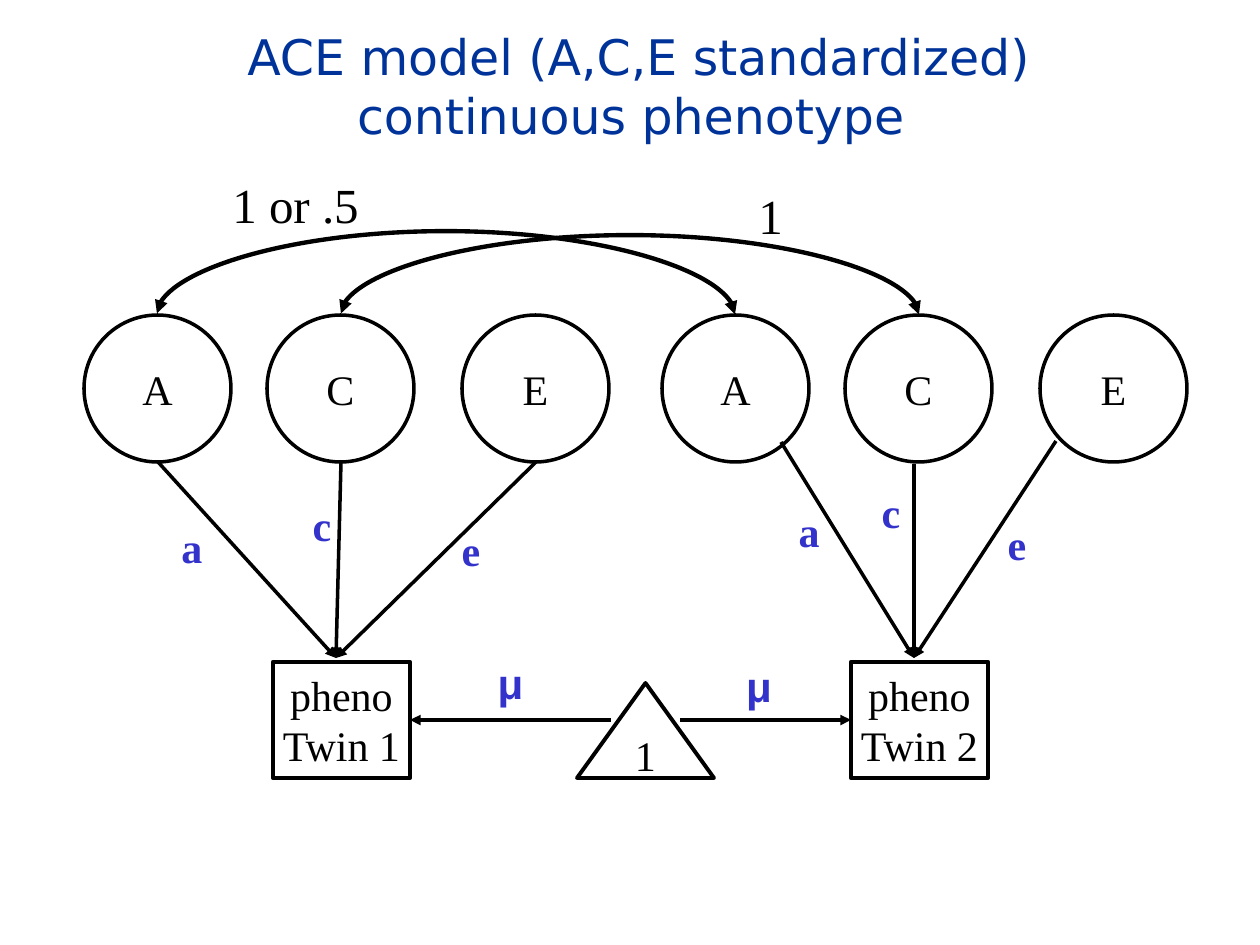
import dataclasses

import pptx
import pptx.dml.color
import pptx.enum.shapes
import pptx.enum.text
import pptx.oxml
import pptx.oxml.ns
import pptx.util

SHAPE = pptx.enum.shapes.MSO_SHAPE
CONNECTOR = pptx.enum.shapes.MSO_CONNECTOR
ALIGN = pptx.enum.text.PP_ALIGN
ANCHOR = pptx.enum.text.MSO_ANCHOR


@dataclasses.dataclass(frozen=True)
class Theme:
    ink: str = "000000"
    paper: str = "FFFFFF"
    heading: str = "003399"
    path_label: str = "3333CC"
    heading_font: str = "DejaVu Sans"
    body_font: str = "Times New Roman"
    symbol_font: str = "Arial"
    large: int = 28
    normal: int = 24
    thin: float = 2
    medium: float = 2.25
    thick: float = 2.5


@dataclasses.dataclass(frozen=True)
class Box:
    x: int
    y: int
    w: int
    h: int

    def inner(self, x, y, w, h):
        return Box(self.x + x, self.y + y, w, h)


THEME = Theme()
LABEL_HEIGHT = 63
RIGHT_SIDE, LEFT_SIDE = 3, 1


def px(length):
    return pptx.util.Emu(round(length * 914400 / 126))


def rgb(value):
    return pptx.dml.color.RGBColor.from_string(value)


def write(shape, text, size=THEME.normal, font=THEME.body_font, color=THEME.ink,
          bold=False, align=ALIGN.CENTER, anchor=ANCHOR.MIDDLE, wrap=False):
    frame = shape.text_frame
    frame.text = text
    frame.word_wrap = wrap
    frame.vertical_anchor = anchor
    for para in frame.paragraphs:
        para.alignment = align
        for span in para.runs:
            span.font.size = pptx.util.Pt(size)
            span.font.name = font
            span.font.bold = bold
            span.font.color.rgb = rgb(color)


def add_text(page, box, text, **style):
    area = page.shapes.add_textbox(px(box.x), px(box.y), px(box.w), px(box.h))
    write(area, text, **style)


def add_path_label(page, box, text, font=THEME.body_font):
    add_text(page, box, text, font=font, color=THEME.path_label, bold=True, wrap=True)


def add_node(page, kind, box, text, weight):
    node = page.shapes.add_shape(kind, px(box.x), px(box.y), px(box.w), px(box.h))
    node.shadow.inherit = False
    node.fill.solid()
    node.fill.fore_color.rgb = rgb(THEME.paper)
    node.line.color.rgb = rgb(THEME.ink)
    node.line.width = pptx.util.Pt(weight)
    write(node, text)
    return node


def add_arrow(page, start, end, weight=THEME.thin, kind=CONNECTOR.STRAIGHT, ends=("tailEnd",)):
    arrow = page.shapes.add_connector(kind, *map(px, (*start, *end)))
    arrow.line.color.rgb = rgb(THEME.ink)
    arrow.line.width = pptx.util.Pt(weight)
    outline = arrow.line._get_or_add_ln()
    for end_name in ends:
        outline.append(pptx.oxml.parse_xml(
            f'<a:{end_name} {pptx.oxml.ns.nsdecls("a")} type="triangle"/>'))
    arrow.element.spPr.append(pptx.oxml.parse_xml(
        f'<a:effectLst {pptx.oxml.ns.nsdecls("a")}/>'))
    return arrow


def add_arc(page, box):
    """Double-headed arc along the bottom of the box, bulging up by the box height."""
    middle, base = box.x + box.w / 2, box.y + box.h
    arc = add_arrow(page, (middle, base), (middle, base), THEME.thick,
                    CONNECTOR.CURVE, ("headEnd", "tailEnd"))
    # A one-px-wide connector turned a quarter, so the bulge is a multiple of its width
    arc.left, arc.top = px(middle - 0.5), px(base - box.w / 2)
    arc.width, arc.height = px(1), px(box.w)
    frame = arc.element.spPr.find(pptx.oxml.ns.qn("a:xfrm"))
    frame.set("rot", "5400000")
    frame.set("flipV", "1")
    geometry = arc.element.spPr.find(pptx.oxml.ns.qn("a:prstGeom"))
    for old in list(geometry):
        geometry.remove(old)
    geometry.append(pptx.oxml.parse_xml(
        f'<a:avLst {pptx.oxml.ns.nsdecls("a")}>'
        f'<a:gd name="adj1" fmla="val {-box.h * 100000}"/></a:avLst>'))


def add_twin(page, box, name, arrow_starts, labels):
    """Latent factors A, C, E above the observed phenotype of one twin."""
    pheno = add_node(page, SHAPE.RECTANGLE, box.inner(189, 347, 137, 116),
                     f"pheno\n{name}", THEME.thick)
    for letter, x in zip("ACE", (0, 183, 378)):
        add_node(page, SHAPE.OVAL, box.inner(x, 0, 147, 147), letter, THEME.thin)
    for x, y in arrow_starts:
        add_arrow(page, (box.x + x, box.y + y), (box.x + 252, box.y + 343))
    for letter, (x, y, width) in zip("ace", labels):
        add_path_label(page, box.inner(x, y, width, LABEL_HEIGHT), letter)
    return pheno


def add_correlations(page, box):
    """Arcs between the A factors and between the C factors, with their values."""
    add_arc(page, box.inner(0, 63, 578, 83))
    add_arc(page, box.inner(184, 67, 578, 79))
    for text, x, y, width in (("1", 589, 11, 50), ("1 or .5", 63, 0, 154)):
        add_text(page, box.inner(x, y, width, 72), text, size=THEME.large,
                 align=ALIGN.LEFT, anchor=ANCHOR.TOP)


def add_means(page, box, first_pheno, second_pheno):
    """Constant triangle with a mean path to each phenotype."""
    add_node(page, SHAPE.ISOSCELES_TRIANGLE, box.inner(167, 21, 137, 95), "1", THEME.medium)
    middle = box.y + box.h // 2
    for pheno, side, start, end in ((first_pheno, RIGHT_SIDE, 201, 0),
                                    (second_pheno, LEFT_SIDE, 270, box.w)):
        arrow = add_arrow(page, (box.x + start, middle), (box.x + end, middle))
        arrow.end_connect(pheno, side)
    for x, y, width in ((44, 0, 113), (308, 3, 82)):
        add_path_label(page, box.inner(x, y - 11, width, LABEL_HEIGHT), "μ", THEME.symbol_font)


def main():
    deck = pptx.Presentation()
    deck.slide_width, deck.slide_height = px(1260), px(945)
    page = deck.slides.add_slide(deck.slide_layouts[6])

    # Title
    add_text(page, Box(48, 22, 1165, 127), " ACE model (A,C,E standardized)\vcontinuous phenotype",
             size=THEME.large, font=THEME.heading_font, color=THEME.heading, wrap=True)

    # Twins
    first = add_twin(page, Box(84, 315, 525, 463), "Twin 1",
                     ((74, 147), (257, 147), (452, 147)),
                     ((31, 200, 154), (216, 178, 44), (365, 203, 44)))
    second = add_twin(page, Box(662, 315, 525, 463), "Twin 2",
                      ((119, 127), (252, 149), (394, 126)),
                      ((75, 184, 144), (207, 165, 44), (333, 197, 44)))

    # Links between the twins
    add_correlations(page, Box(157, 168, 762, 146))
    add_means(page, Box(410, 662, 441, 116), first, second)

    deck.save("out.pptx")


if __name__ == "__main__":
    main()
